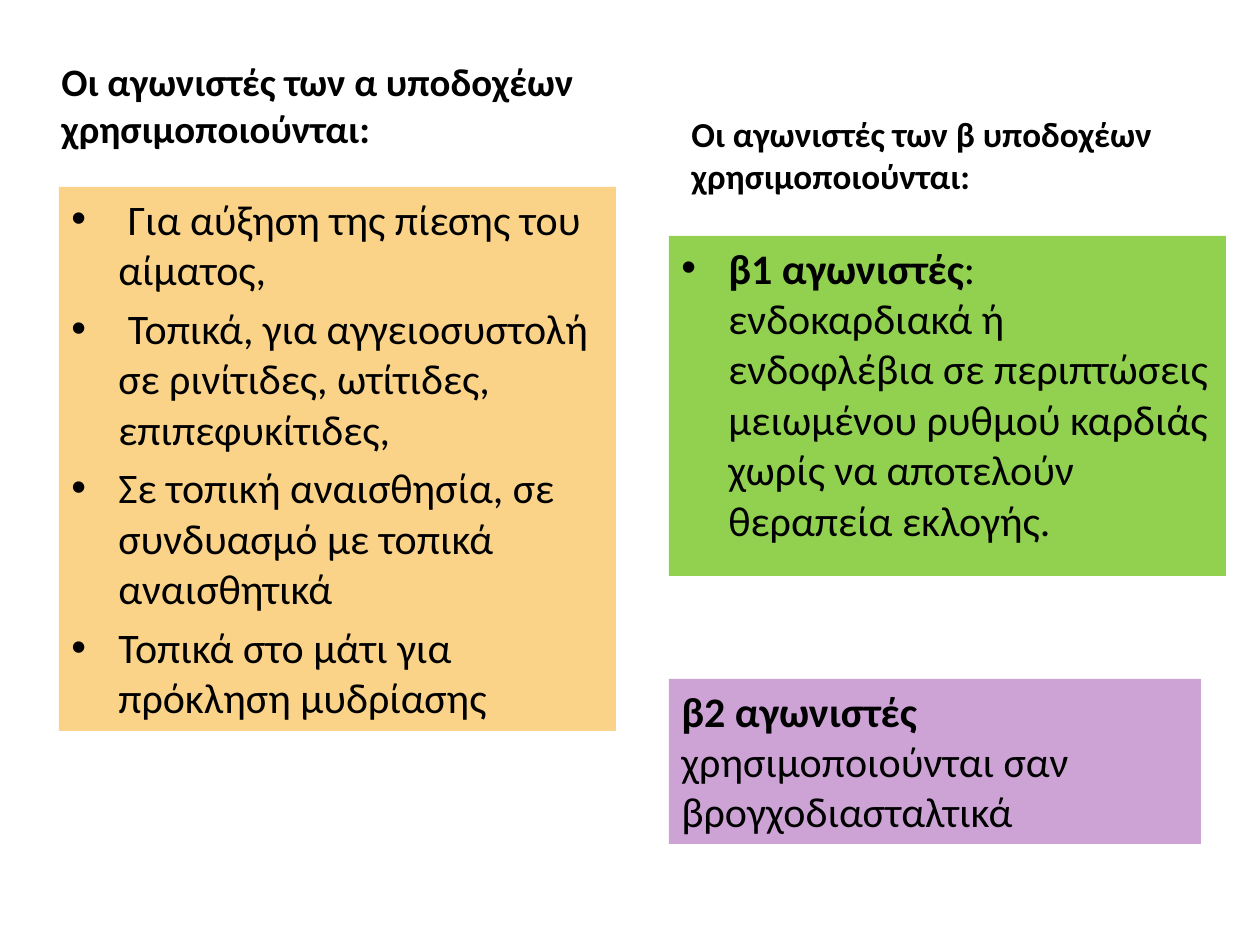
from dataclasses import dataclass

from pptx import Presentation
from pptx.dml.color import RGBColor as RGB
from pptx.enum.shapes import MSO_SHAPE as SHAPE
from pptx.enum.text import MSO_ANCHOR as ANCHOR, PP_ALIGN as ALIGN
from pptx.oxml.ns import qn
from pptx.util import Pt
from lxml import etree

PX = 914400 / 126


def px(n):
    return round(n * PX)


@dataclass(frozen=True)
class Theme:
    font: str = "Calibri"
    text: str = "000000"
    alpha: str = "FBD388"
    beta1: str = "92D050"
    beta2: str = "CDA3D6"
    body: float = 24
    head_alpha: float = 22.2
    head_beta: float = 20
    gap: float = 4.8
    indent: int = 47


class Deck:
    """Holds the theme and the current slide and adds its elements."""

    def __init__(self, theme, width, height):
        self.t = theme
        self.prs = Presentation()
        self.prs.slide_width, self.prs.slide_height = px(width), px(height)
        self.s = self.prs.slides.add_slide(self.prs.slide_layouts[6])

    def style(self, r, size, bold=False):
        f = r.font
        f.name, f.size, f.bold = self.t.font, Pt(size), bold
        f.color.rgb = RGB.from_string(self.t.text)

    def heading(self, box, text, size, bottom=6):
        tf = self.s.shapes.add_textbox(*map(px, box)).text_frame
        tf.word_wrap = True
        tf.vertical_anchor = ANCHOR.BOTTOM
        tf.margin_bottom = px(bottom)
        tf.text = text
        self.style(tf.paragraphs[0].runs[0], size, True)

    def panel(self, box, fill, items, bullets=True):
        sp = self.s.shapes.add_shape(SHAPE.RECTANGLE, *map(px, box))
        sp.shadow.inherit = False
        sp.fill.solid()
        sp.fill.fore_color.rgb = RGB.from_string(fill)
        sp.line.fill.background()
        tf = sp.text_frame
        tf.word_wrap = True
        tf.vertical_anchor = ANCHOR.TOP
        for i, (lead, rest) in enumerate(items):
            p = tf.add_paragraph() if i else tf.paragraphs[0]
            p.alignment = ALIGN.LEFT
            if i:
                p.space_before = Pt(self.t.gap)
            if bullets:
                self.bullet(p)
            for text, bold in ((lead, True), (rest, False)):
                if text:
                    r = p.add_run()
                    r.text = text
                    self.style(r, self.t.body, bold)

    def bullet(self, p):
        pPr = p._p.get_or_add_pPr()
        pPr.set("marL", str(px(self.t.indent)))
        pPr.set("indent", str(-px(self.t.indent)))
        etree.SubElement(pPr, qn("a:buFont")).set("typeface", "Arial")
        etree.SubElement(pPr, qn("a:buChar")).set("char", "•")


def main():
    t = Theme()
    d = Deck(t, 1260, 945)
    d.heading((49, 69, 557, 88), "Οι αγωνιστές των α υποδοχέων χρησιμοποιούνται:", t.head_alpha)
    d.panel((59, 187, 557, 544), t.alpha, [
        ("", " Για αύξηση της πίεσης του αίματος,"),
        ("", " Τοπικά, για αγγειοσυστολή σε ρινίτιδες, ωτίτιδες, επιπεφυκίτιδες,"),
        ("", "Σε τοπική αναισθησία, σε συνδυασμό με τοπικά αναισθητικά"),
        ("", "Τοπικά στο μάτι για πρόκληση μυδρίασης"),
    ])
    d.heading((679, 129, 557, 88), "Οι αγωνιστές των β υποδοχέων χρησιμοποιούνται:", t.head_beta, bottom=20)
    d.panel((669, 236, 557, 340), t.beta1, [
        ("β1 αγωνιστές", ": ενδοκαρδιακά ή ενδοφλέβια σε περιπτώσεις μειωμένου ρυθμού "
                         "καρδιάς χωρίς να αποτελούν θεραπεία εκλογής."),
    ])
    d.panel((669, 679, 532, 165), t.beta2, [
        ("β2 αγωνιστές ", "χρησιμοποιούνται σαν βρογχοδιασταλτικά"),
    ], bullets=False)
    d.prs.save("out.pptx")


if __name__ == "__main__":
    main()
